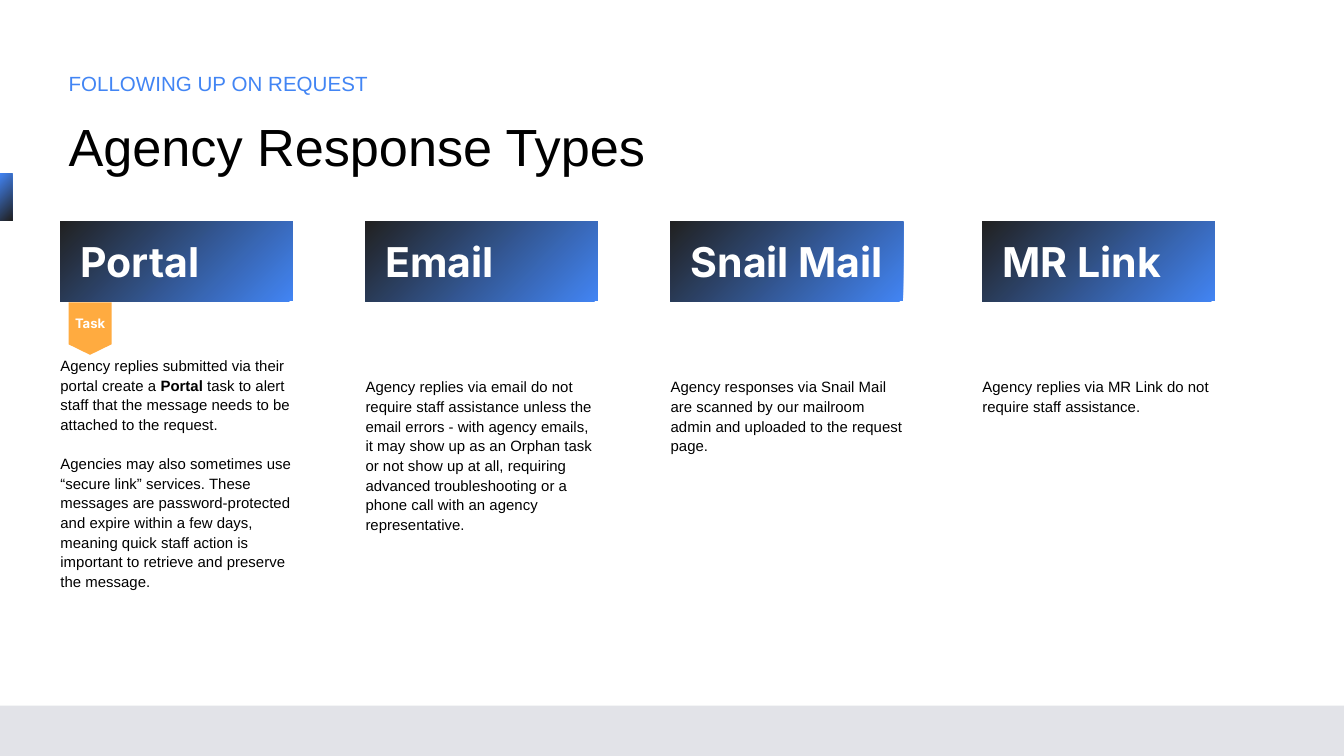
from dataclasses import dataclass

from lxml import etree
from pptx import Presentation
from pptx import util as u
from pptx.dml.color import RGBColor
from pptx.enum import shapes, text
from pptx.oxml import ns
from pptx.slide import Slide

SLIDE_WIDTH = 10
SLIDE_HEIGHT = SLIDE_WIDTH * 9 / 16
FOOTER_TOP = 5.25
BLUE, DARK, WHITE, BLACK = "4285F4", "212121", "FFFFFF", "000000"
COLUMN_WIDTH = 1.73
HEADER_TOP, HEADER_HEIGHT = 1.65, 0.59
BODY_HEIGHT = 2.1


@dataclass
class Run:
    text: str
    bold: bool = False


@dataclass
class Style:
    size: float
    color: str = BLACK
    font: str = "Arial"
    bold: bool | None = None
    line_spacing: float | None = None
    space_before: float = 0
    align: text.PP_ALIGN = text.PP_ALIGN.LEFT


@dataclass
class Margins:
    left: float = 0
    top: float = 0
    right: float = 0
    bottom: float = 0


@dataclass
class Column:
    left: float
    heading: str
    body: list[list[Run]]
    body_top: float = 2.8


HEADING = Style(22, WHITE, "Inter", bold=True)
BODY = Style(8, line_spacing=1.1, space_before=10.5)
TAG = Style(7, WHITE, "Inter", bold=True, align=text.PP_ALIGN.CENTER)

COLUMNS = [
    Column(0.45, "Portal", [
        [Run("Agency replies submitted via their portal create a "),
         Run("Portal", bold=True),
         Run(" task to alert staff that the message needs to be attached "
             "to the request.")],
        [Run("Agencies may also sometimes use “secure link” services. These "
             "messages are password-protected and expire within a few days, "
             "meaning quick staff action is important to retrieve and "
             "preserve the message.")],
    ], body_top=2.64),
    Column(2.72, "Email", [
        [Run("Agency replies via email do not require staff assistance unless "
             "the email errors - with agency emails, it may show up as an "
             "Orphan task or not show up at all, requiring advanced "
             "troubleshooting or a phone call with an agency "
             "representative.")],
    ]),
    Column(4.99, "Snail Mail", [
        [Run("Agency responses via Snail Mail are scanned by our mailroom "
             "admin and uploaded to the request page.")],
    ]),
    Column(7.31, "MR Link", [
        [Run("Agency replies via MR Link do not require staff assistance.")],
    ]),
]


def rgb(color: str) -> RGBColor:
    return RGBColor.from_string(color)


def write(shape, paragraphs: list[list[Run]], style: Style,
          margins: Margins = Margins(), anchor=text.MSO_ANCHOR.TOP) -> None:
    """Fill a shape with text in one style."""
    frame = shape.text_frame
    frame.word_wrap = True
    frame.vertical_anchor = anchor
    frame.margin_left = u.Inches(margins.left)
    frame.margin_top = u.Inches(margins.top)
    frame.margin_right = u.Inches(margins.right)
    frame.margin_bottom = u.Inches(margins.bottom)
    for index, runs in enumerate(paragraphs):
        paragraph = frame.add_paragraph() if index else frame.paragraphs[0]
        paragraph.alignment = style.align
        paragraph.line_spacing = style.line_spacing
        if index:
            paragraph.space_before = u.Pt(style.space_before)
        font = paragraph.font
        font.name, font.size, font.bold = style.font, u.Pt(style.size), style.bold
        font.color.rgb = rgb(style.color)
        for item in runs:
            run = paragraph.add_run()
            run.text = item.text
            if item.bold:
                run.font.bold = True


def add_text(slide: Slide, left: float, top: float, width: float, height: float,
             paragraphs: list[list[Run]], style: Style) -> None:
    box = slide.shapes.add_textbox(*map(u.Inches, (left, top, width, height)))
    write(box, paragraphs, style)


def add_block(slide: Slide, left: float, top: float, width: float, height: float,
              color: str | None = None,
              kind=shapes.MSO_SHAPE.RECTANGLE):
    """Add an unlined shape, with the blue-to-dark gradient if no color is given."""
    shape = slide.shapes.add_shape(
        kind, *map(u.Inches, (left, top, width, height)))
    shape.shadow.inherit = False
    shape.line.fill.background()
    if color:
        shape.fill.solid()
        shape.fill.fore_color.rgb = rgb(color)
    else:
        shape.fill.gradient()
        shape.fill.gradient_angle = 135
        for stop, stop_color in zip(shape.fill.gradient_stops, (BLUE, DARK)):
            stop.color.rgb = rgb(stop_color)
    return shape


def set_opacity(shape, percent: int) -> None:
    color = shape.fill._xPr.find(f".//{ns.qn('a:srgbClr')}")
    etree.SubElement(color, ns.qn("a:alpha"), val=str(percent * 1000))


def add_column(slide: Slide, column: Column) -> None:
    header = add_block(slide, column.left, HEADER_TOP, COLUMN_WIDTH, HEADER_HEIGHT)
    # The narrower right margin keeps the longest heading on one line
    write(header, [[Run(column.heading)]], HEADING,
          Margins(left=0.15, right=0.05), text.MSO_ANCHOR.MIDDLE)
    add_text(slide, column.left, column.body_top, COLUMN_WIDTH, BODY_HEIGHT,
             column.body, BODY)


def main() -> None:
    presentation = Presentation()
    presentation.slide_width = u.Inches(SLIDE_WIDTH)
    presentation.slide_height = u.Inches(SLIDE_HEIGHT)
    slide = presentation.slides.add_slide(presentation.slide_layouts[6])

    # Footer band and side accent
    footer = add_block(slide, 0, FOOTER_TOP, SLIDE_WIDTH,
                       SLIDE_HEIGHT - FOOTER_TOP, "D6D8DF")
    set_opacity(footer, 70)
    accent = add_block(slide, 0, 1.29, 0.09, 0.35)
    accent.rotation = 180

    # Title and kicker
    add_text(slide, 0.51, 0.9, 6.88, 0.91, [[Run("Agency Response Types")]],
             Style(28, line_spacing=0.9))
    add_text(slide, 0.51, 0.51, 2.95, 0.19, [[Run("FOLLOWING UP ON REQUEST")]],
             Style(11, BLUE, line_spacing=1.1))

    # Response types
    for column in COLUMNS:
        add_column(slide, column)

    # Task tag under the portal heading
    tag = add_block(slide, 0.51, 2.25, 0.32, 0.39, "FFAB40",
                    shapes.MSO_SHAPE.FLOWCHART_OFFPAGE_CONNECTOR)
    write(tag, [[Run("Task")]], TAG, Margins(0.01, 0.01, 0.01, 0.01),
          text.MSO_ANCHOR.MIDDLE)

    presentation.save("out.pptx")


if __name__ == "__main__":
    main()
